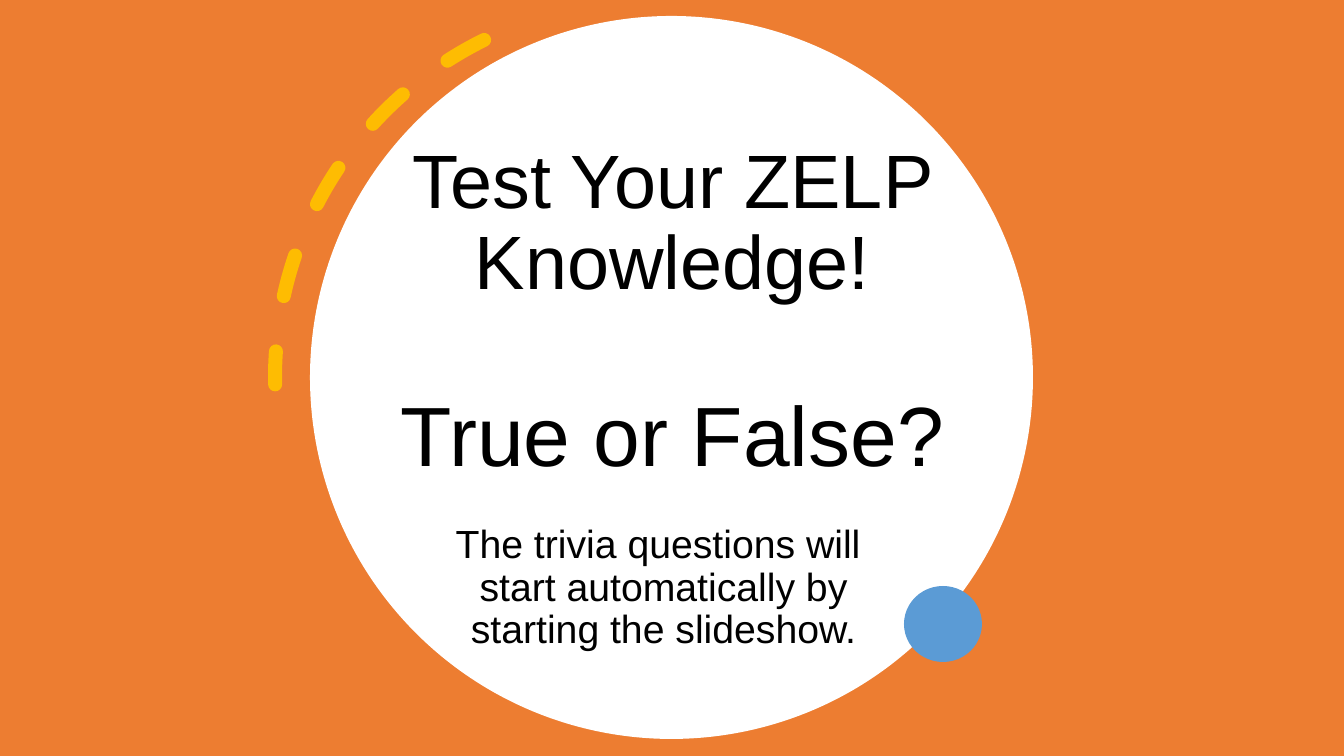
from lxml import etree
from pptx import Presentation
from pptx.dml.color import RGBColor
from pptx.enum.dml import MSO_LINE
from pptx.enum.shapes import MSO_SHAPE
from pptx.enum.text import MSO_ANCHOR, PP_ALIGN
from pptx.oxml.ns import qn
from pptx.util import Emu, Pt

RECT, OVAL, ARC = MSO_SHAPE.RECTANGLE, MSO_SHAPE.OVAL, MSO_SHAPE.ARC
DASH = MSO_LINE.DASH
CENTER, BOTTOM = PP_ALIGN.CENTER, MSO_ANCHOR.BOTTOM

THEME = {
    "font": "Arial", "text": "000000", "back": "ED7D31", "disc": "FFFFFF",
    "dash": "FFC000", "dot": "5B9BD5",
    "head": 54, "ask": 60, "body": 28, "stroke": 10, "leading": 0.9,
}

# text, size name, space before in px
TITLE = [("Test Your ZELP Knowledge!", "head", 0),
         ("True or False?", "ask", 88)]
NOTE = [("The trivia questions will ", "body", 0),
        ("start automatically by starting the slideshow.", "body", 0)]

# left, top, width, height in px
FILLS = [(RECT, (0, 0, 1344, 756), "back"),
         (OVAL, (310, 16, 723, 723), "disc")]
DOT = (OVAL, (904, 586, 78, 76), "dot")
SWEEP = (275, 1, 751, 751)
TITLE_BOX = (385, 126, 575, 364)
NOTE_BOX = (405, 542, 517, 115)

SCALE = 914400 / 100.8


def px(n):
    return Emu(round(n * SCALE))


def color(name):
    return RGBColor.from_string(THEME[name])


def add_fill(slide, kind, box, name):
    shape = slide.shapes.add_shape(kind, *map(px, box))
    shape.shadow.inherit = False
    shape.fill.solid()
    shape.fill.fore_color.rgb = color(name)
    shape.line.fill.background()


def add_sweep(slide):
    """Dashed arc with round caps, running from the top down the left side."""
    arc = slide.shapes.add_shape(ARC, *map(px, SWEEP))
    arc.shadow.inherit = False
    arc.fill.background()
    arc.adjustments[0] = 162
    arc.adjustments[1] = 200.93
    arc.rotation = 153.7
    arc._element.spPr.find(qn("a:xfrm")).set("flipV", "1")
    line = arc.line
    line.color.rgb = color("dash")
    line.width = Pt(THEME["stroke"])
    line.dash_style = DASH
    ln = arc._element.spPr.find(qn("a:ln"))
    ln.set("cap", "rnd")
    tint = ln.find(".//" + qn("a:srgbClr"))
    etree.SubElement(tint, qn("a:alpha")).set("val", "95000")


def add_text(slide, box, lines):
    frame = slide.shapes.add_textbox(*map(px, box)).text_frame
    frame.word_wrap = True
    frame.vertical_anchor = BOTTOM
    for i, (text, size, gap) in enumerate(lines):
        para = frame.add_paragraph() if i else frame.paragraphs[0]
        para.text = text
        para.alignment = CENTER
        para.line_spacing = THEME["leading"]
        para.space_before = px(gap)
        para.font.name = THEME["font"]
        para.font.size = Pt(THEME[size])
        para.font.color.rgb = color("text")


def main():
    deck = Presentation()
    deck.slide_width, deck.slide_height = px(1344), px(756)
    slide = deck.slides.add_slide(deck.slide_layouts[6])
    for item in FILLS:
        add_fill(slide, *item)
    add_text(slide, TITLE_BOX, TITLE)
    add_sweep(slide)
    add_fill(slide, *DOT)
    add_text(slide, NOTE_BOX, NOTE)
    deck.save("out.pptx")


if __name__ == "__main__":
    main()
